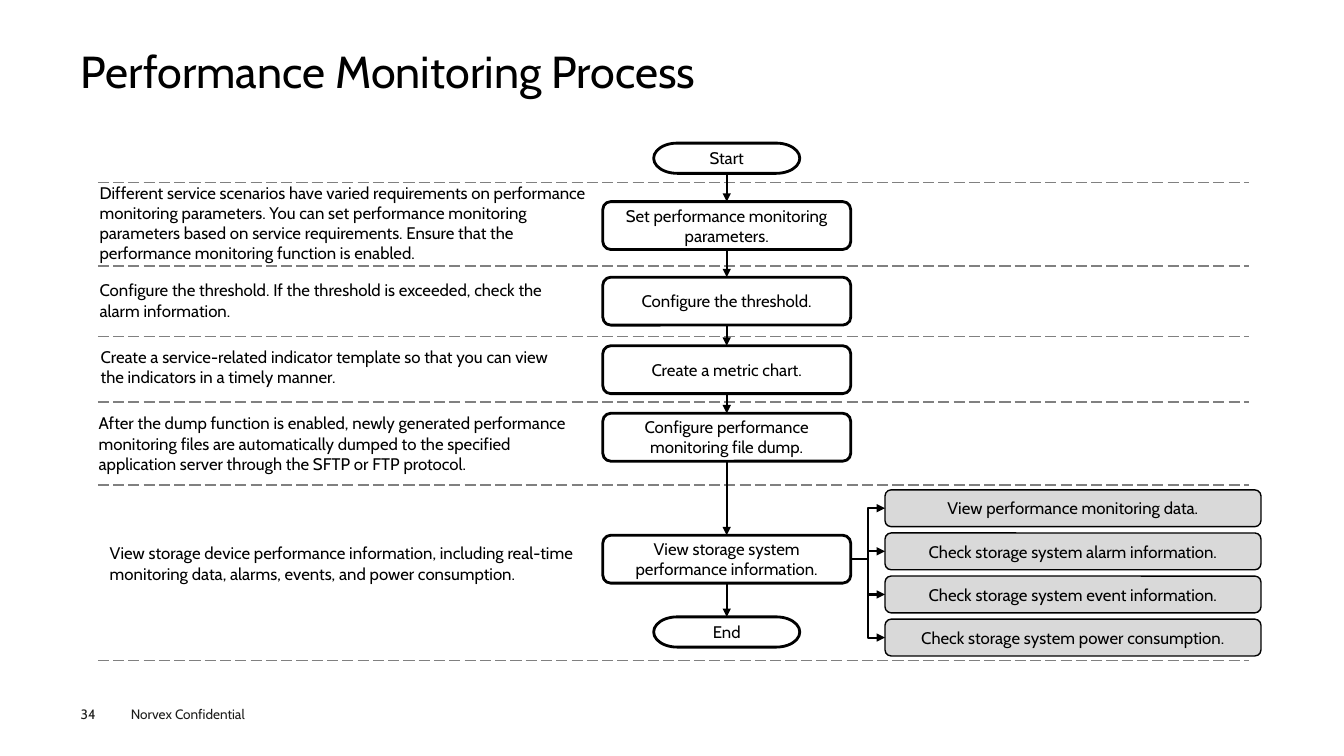
from itertools import pairwise

from lxml.etree import SubElement
from pptx import Presentation
from pptx.dml.color import RGBColor
from pptx.enum.dml import MSO_LINE
from pptx.enum.shapes import MSO_CONNECTOR, MSO_SHAPE
from pptx.enum.text import MSO_ANCHOR, PP_ALIGN
from pptx.oxml.ns import qn
from pptx.util import Inches, Pt

BLACK = RGBColor(0x00, 0x00, 0x00)
FOOTER_INK = RGBColor(0x1D, 0x1D, 0x1B)
DIVIDER_GREY = RGBColor(0x80, 0x80, 0x80)
PANEL_GREY = RGBColor(0xD9, 0xD9, 0xD9)

COLUMNS, ROWS = 40, 30
TOP, LEFT, BOTTOM, RIGHT = range(4)
MARGIN = 2.4
FLOW_CENTER = 21.63
STEP_WIDTH, STEP_HEIGHT = 7.38, 1.9
TERMINAL_WIDTH, TERMINAL_HEIGHT = 4.35, 1.2
TASK_TOP, TASK_PITCH = 19.44, 1.71

STEPS = [
    (8, "Set performance monitoring parameters."),
    (11, "Configure the threshold."),
    (13.72, "Create a metric chart."),
    (16.4, "Configure performance monitoring file dump."),
    (21.24, "View storage system performance information."),
]
NOTES = [
    (2.67, 7.04, 15.5, 3.56,
     "Different service scenarios have varied requirements on performance "
     "monitoring parameters. You can set performance monitoring parameters "
     "based on service requirements. Ensure that the performance monitoring "
     "function is enabled."),
    (2.67, 10.92, 14.58, 2.4,
     "Configure the threshold. If the threshold is exceeded, check the alarm "
     "information."),
    (2.7, 13.56, 14.22, 2.4,
     "Create a service-related indicator template so that you can view the "
     "indicators in a timely manner."),
    (2.64, 16.2, 15.21, 3,
     "After the dump function is enabled, newly generated performance "
     "monitoring files are automatically dumped to the specified application "
     "server through the SFTP or FTP protocol."),
    (2.97, 21.36, 15.21, 2.4,
     "View storage device performance information, including real-time "
     "monitoring data, alarms, events, and power consumption."),
]
TASKS = [
    "View performance monitoring data.",
    "Check storage system alarm information.",
    "Check storage system event information.",
    "Check storage system power consumption.",
]
DIVIDERS = [7.24, 10.56, 13.36, 15.96, 19.24, 26.2]


def write_text(shape, text, size=12, color=BLACK, align=PP_ALIGN.LEFT,
               anchor=MSO_ANCHOR.TOP, margins=(0.1, 0.05), line_spacing=None):
    frame = shape.text_frame
    frame.word_wrap = True
    frame.vertical_anchor = anchor
    frame.margin_left = frame.margin_right = Inches(margins[0])
    frame.margin_top = frame.margin_bottom = Inches(margins[1])
    paragraph = frame.paragraphs[0]
    paragraph.text = text
    paragraph.alignment = align
    paragraph.line_spacing = line_spacing
    paragraph.font.name = "Cabin"
    paragraph.font.size = Pt(size)
    paragraph.font.color.rgb = color


class ProcessSlide:
    def __init__(self, presentation):
        self.slide = presentation.slides.add_slide(presentation.slide_layouts[6])
        self.column = presentation.slide_width / COLUMNS
        self.row = presentation.slide_height / ROWS

    def place(self, left, top, width, height):
        return (round(left * self.column), round(top * self.row),
                round(width * self.column), round(height * self.row))

    def text(self, left, top, width, height, text, **text_format):
        box = self.slide.shapes.add_textbox(*self.place(left, top, width, height))
        write_text(box, text, **text_format)

    def node(self, kind, left, top, width, height, text, line_width=2,
             fill=None, margins=(0.1, 0.05)):
        shape = self.slide.shapes.add_shape(
            kind, *self.place(left, top, width, height))
        shape.shadow.inherit = False
        if fill is None:
            shape.fill.background()
        else:
            shape.fill.solid()
            shape.fill.fore_color.rgb = fill
        shape.line.color.rgb = BLACK
        shape.line.width = Pt(line_width)
        write_text(shape, text, align=PP_ALIGN.CENTER,
                   anchor=MSO_ANCHOR.MIDDLE, margins=margins)
        return shape

    def terminal(self, top, text):
        return self.node(MSO_SHAPE.FLOWCHART_TERMINATOR,
                         FLOW_CENTER - TERMINAL_WIDTH / 2, top,
                         TERMINAL_WIDTH, TERMINAL_HEIGHT, text)

    def step(self, top, text):
        return self.node(MSO_SHAPE.ROUNDED_RECTANGLE,
                         FLOW_CENTER - STEP_WIDTH / 2, top,
                         STEP_WIDTH, STEP_HEIGHT, text)

    def task(self, top, text):
        return self.node(MSO_SHAPE.ROUNDED_RECTANGLE, 26.34, top, 11.19, 1.46,
                         text, line_width=1, fill=PANEL_GREY,
                         margins=(0.04, 0.05))

    def connector(self, kind, ends, color, width):
        connector = self.slide.shapes.add_connector(kind, *ends)
        connector.line.color.rgb = color
        connector.line.width = Pt(width)
        return connector

    def divider(self, top):
        line = self.connector(
            MSO_CONNECTOR.STRAIGHT,
            self.place(2.91, top, 37.17, top), DIVIDER_GREY, 1)
        line.line.dash_style = MSO_LINE.LONG_DASH
        self.remove_shadow(line)

    def arrow(self, source, source_side, target, target_side,
              kind=MSO_CONNECTOR.STRAIGHT):
        arrow = self.connector(kind, (0, 0, 0, 0), BLACK, 1.5)
        arrow.begin_connect(source, source_side)
        arrow.end_connect(target, target_side)
        SubElement(arrow.line._get_or_add_ln(), qn("a:tailEnd"), type="triangle")
        self.remove_shadow(arrow)

    def remove_shadow(self, connector):
        SubElement(connector._element.spPr, qn("a:effectLst"))


def main():
    presentation = Presentation()
    presentation.slide_width = Inches(13.33)
    presentation.slide_height = Inches(7.5)
    page = ProcessSlide(presentation)

    page.text(3.6, 27.8, 4.8, 1.08, "Norvex Confidential",
              size=9.7, color=FOOTER_INK)
    page.text(MARGIN, 28, 1.65, 0.64, "34",
              size=9.7, color=FOOTER_INK, margins=(0, 0))
    page.text(MARGIN, 1.96, 35.2, 2.16, "Performance Monitoring Process",
              size=32, margins=(0, 0), line_spacing=0.9)

    for top in DIVIDERS:
        page.divider(top)
    for note in NOTES:
        page.text(*note)

    start = page.terminal(5.68, "Start")
    steps = [page.step(top, text) for top, text in STEPS]
    end = page.terminal(24.48, "End")
    for source, target in pairwise([start, *steps, end]):
        page.arrow(source, BOTTOM, target, TOP)

    for index, text in enumerate(TASKS):
        task = page.task(TASK_TOP + index * TASK_PITCH, text)
        page.arrow(steps[-1], RIGHT, task, LEFT, MSO_CONNECTOR.ELBOW)

    presentation.save("out.pptx")


if __name__ == "__main__":
    main()
